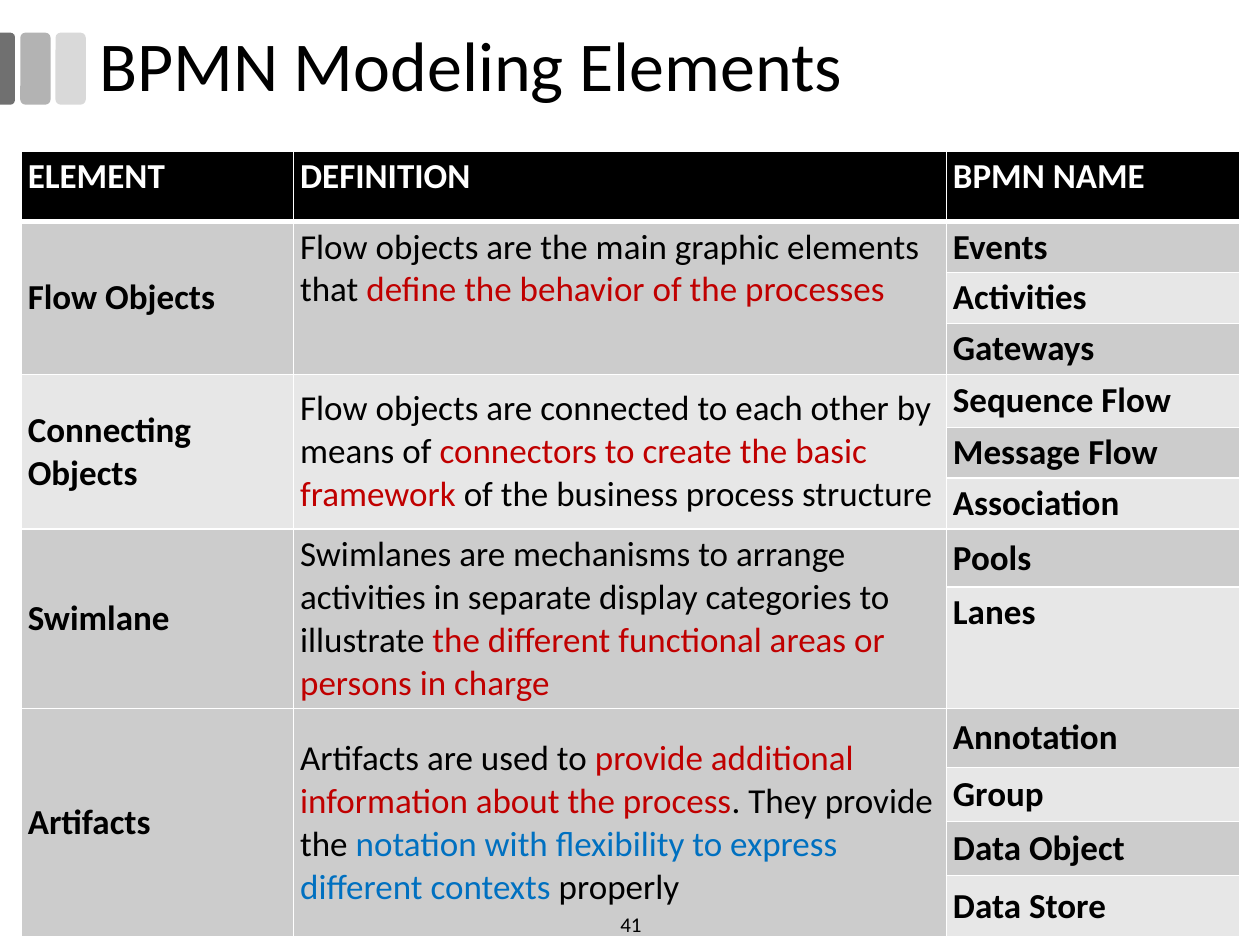
from lxml.etree import SubElement
from pptx import Presentation
from pptx.dml.color import RGBColor
from pptx.enum.shapes import MSO_SHAPE
from pptx.enum.text import MSO_ANCHOR, PP_ALIGN
from pptx.oxml.ns import qn
from pptx.util import Cm, Pt

BLACK, WHITE, RED, BLUE = "000000", "FFFFFF", "C00000", "0070C0"
BANDS = ["E7E7E7", "CCCCCC"]
COLS = [5.49, 13.16, 5.92]
ROWS = [1.42, 1, 1, 1, 1.07, 1, 1, 1.17, 2.29, 1.19, 1.09, 1.09, 1.24]
HEADS = ["ELEMENT", "DEFINITION", "BPMN NAME"]
GROUPS = [
    ("Flow Objects",
     [("Flow objects are the main graphic elements that ", BLACK),
      ("define the behavior of the processes", RED)],
     ["Events", "Activities", "Gateways"]),
    ("Connecting Objects",
     [("Flow objects are connected to each other by means of ", BLACK),
      ("connectors to create the basic framework ", RED),
      ("of the business process structure", BLACK)],
     ["Sequence Flow", "Message Flow", "Association"]),
    ("Swimlane",
     [("Swimlanes are mechanisms to arrange activities in separate "
       "display categories to illustrate ", BLACK),
      ("the different functional areas or persons in charge", RED)],
     ["Pools", "Lanes"]),
    ("Artifacts",
     [("Artifacts are used to ", BLACK),
      ("provide additional information about the process", RED),
      (". They provide the ", BLACK),
      ("notation with flexibility to express different contexts ", BLUE),
      ("properly", BLACK)],
     ["Annotation", "Group", "Data Object", "Data Store"]),
]


def paint(fill, tone):
    fill.solid()
    fill.fore_color.rgb = RGBColor.from_string(tone)


def write(frame, runs, size, bold=False):
    para = frame.paragraphs[0]
    for text, tone in runs:
        run = para.add_run()
        run.text = text
        font = run.font
        font.name, font.size, font.bold = "Calibri", Pt(size), bold
        paint(font.fill, tone)
    return para


def add_label(slide, box, text, size):
    frame = slide.shapes.add_textbox(*map(Cm, box)).text_frame
    frame.word_wrap = True
    frame.vertical_anchor = MSO_ANCHOR.MIDDLE
    return write(frame, [(text, BLACK)], size)


def add_bar(slide, kind, box, tone):
    bar = slide.shapes.add_shape(kind, *map(Cm, box))
    bar.shadow.inherit = False
    paint(bar.fill, tone)
    bar.line.fill.background()
    return bar


def add_bars(slide, left, top, width, height):
    for step, tone in enumerate(["B3B3B3", "D9D9D9"]):
        box = left + 0.41 + step * 0.71, top, width, height
        add_bar(slide, MSO_SHAPE.ROUNDED_RECTANGLE, box, tone)
    thin = 0.3
    box = left + (thin - height) / 2, top + (height - thin) / 2, height, thin
    edge = add_bar(slide, MSO_SHAPE.ROUND_2_SAME_RECTANGLE, box, "707070")
    edge.adjustments[0] = 0.29
    edge.rotation = 90


def style(cell, tone, row):
    cell.margin_left = cell.margin_right = Cm(0.13)
    cell.margin_top = cell.margin_bottom = Cm(0.08)
    props = cell._tc.get_or_add_tcPr()
    for side in "LRTB":
        thick = (row, side) in [(0, "B"), (1, "T")]
        line = SubElement(props, qn("a:ln" + side), w=str(Pt(3 if thick else 1)))
        solid = SubElement(line, qn("a:solidFill"))
        SubElement(solid, qn("a:srgbClr"), val=WHITE)
    paint(cell.fill, tone)


def add_grid(slide, left, top):
    box = left, top, sum(COLS), sum(ROWS)
    grid = slide.shapes.add_table(len(ROWS), len(COLS), *map(Cm, box)).table
    for col, width in zip(grid.columns, COLS):
        col.width = Cm(width)
    for row, height in zip(grid.rows, ROWS):
        row.height = Cm(height)

    def put(row, col, runs, bold=True, mid=True):
        cell = grid.cell(row, col)
        if mid:
            cell.vertical_anchor = MSO_ANCHOR.MIDDLE
        write(cell.text_frame, runs, 20, bold)

    for col, head in enumerate(HEADS):
        style(grid.cell(0, col), BLACK, 0)
        put(0, col, [(head, WHITE)], mid=False)
    first = 1
    for title, runs, names in GROUPS:
        last = first + len(names) - 1
        for row, name in enumerate(names, first):
            for col in range(3):
                base = row if col == 2 else first
                style(grid.cell(row, col), BANDS[base % 2], row)
            put(row, 2, [(name, BLACK)], mid=name != "Lanes")
        for col in range(2):
            grid.cell(first, col).merge(grid.cell(last, col))
        put(first, 0, [(title, BLACK)])
        put(first, 1, runs, bold=False, mid=first > 1)
        first = last + 1


def main():
    deck = Presentation()
    deck.slide_width, deck.slide_height = Cm(25.4), Cm(19.05)
    slide = deck.slides.add_slide(deck.slide_layouts[6])
    add_bars(slide, 0, 0.66, 0.61, 1.45)
    add_grid(slide, 0.43, 3.05)
    page = add_label(slide, (9.86, 18.21, 5.72, 0.84), "41", 12)
    page.alignment = PP_ALIGN.CENTER
    title = add_label(slide, (1.75, 0.43, 23.62, 1.9), "BPMN Modeling Elements", 40)
    title.line_spacing = 0.9
    deck.save("out.pptx")


if __name__ == "__main__":
    main()
